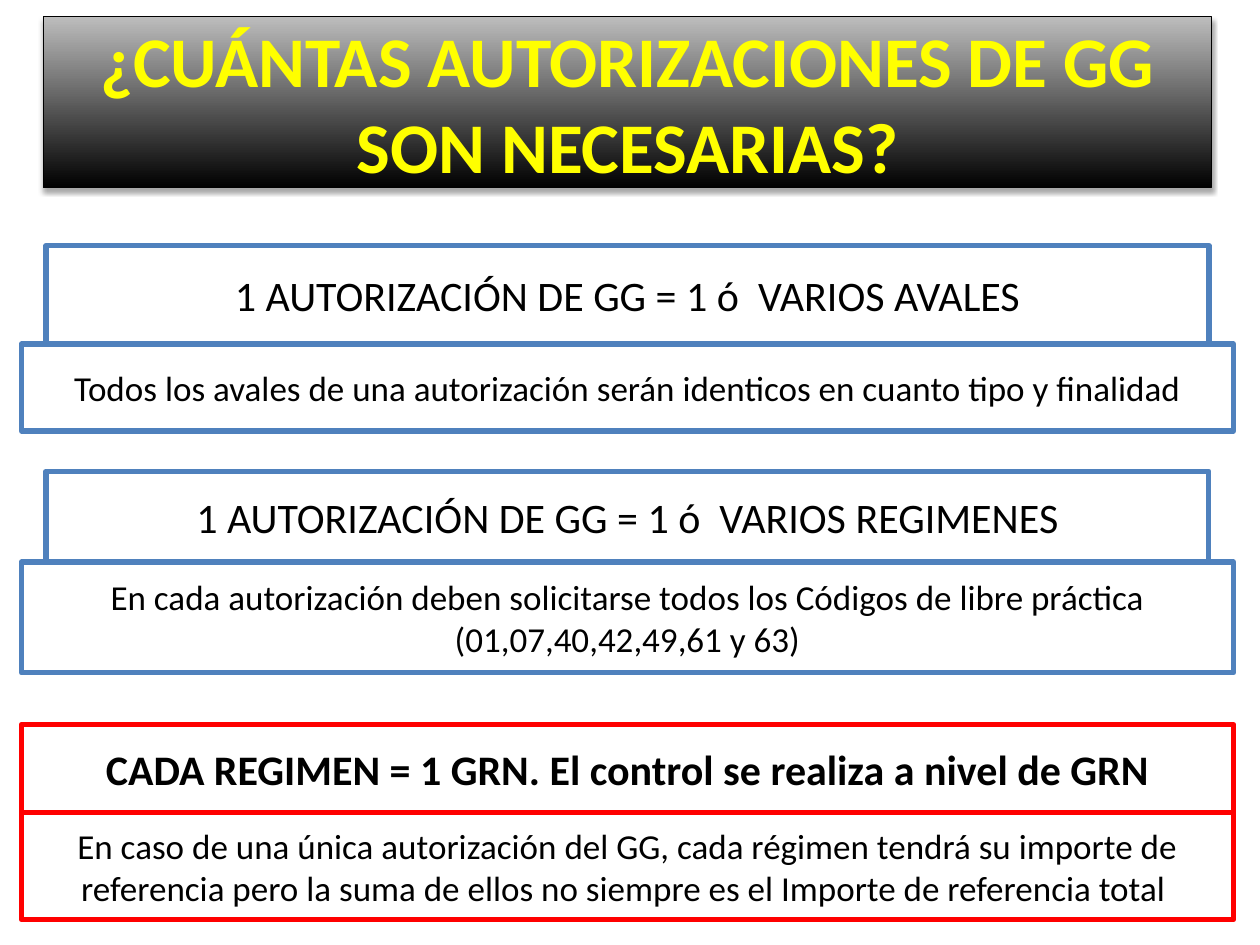
from dataclasses import dataclass

import pptx
import pptx.dml.color
import pptx.enum.shapes
import pptx.enum.text
import pptx.oxml
import pptx.oxml.ns
import pptx.util

SLIDE_WIDTH = pptx.util.Inches(10)
SLIDE_HEIGHT = pptx.util.Inches(7.5)
CENTER = 49.8
BLUE, RED, BLACK, YELLOW, GREY = "4F81BD", "FF0000", "000000", "FFFF00", "BDBDBD"


@dataclass
class Band:
    text: str
    top: float
    height: float
    width: float
    size: float
    line_color: str
    line_width: float = 3
    text_color: str = BLACK
    bold: bool = False


@dataclass
class Panel:
    heading: str
    detail: str
    top: float
    heading_height: float
    detail_height: float
    heading_width: float
    color: str
    bold: bool = False


def rgb(value: str) -> pptx.dml.color.RGBColor:
    return pptx.dml.color.RGBColor.from_string(value)


def across(percent: float) -> int:
    return round(SLIDE_WIDTH * percent / 100)


def down(percent: float) -> int:
    return round(SLIDE_HEIGHT * percent / 100)


def add_box(page):
    box = page.shapes.add_shape(
        pptx.enum.shapes.MSO_SHAPE.RECTANGLE, 0, 0, across(1), down(1)
    )
    box.shadow.inherit = False
    return box


def format_band(box, band: Band) -> None:
    box.left, box.top = across(CENTER - band.width / 2), down(band.top)
    box.width, box.height = across(band.width), down(band.height)
    box.fill.background()
    box.line.color.rgb = rgb(band.line_color)
    box.line.width = pptx.util.Pt(band.line_width)
    frame = box.text_frame
    frame.word_wrap = True
    frame.auto_size = pptx.enum.text.MSO_AUTO_SIZE.NONE
    frame.vertical_anchor = pptx.enum.text.MSO_ANCHOR.MIDDLE
    para = frame.paragraphs[0]
    para.alignment = pptx.enum.text.PP_ALIGN.CENTER
    span = para.add_run()
    span.text = band.text
    span.font.name = "Calibri"
    span.font.size = pptx.util.Pt(band.size)
    span.font.bold = band.bold
    span.font.color.rgb = rgb(band.text_color)


def shade_banner(box) -> None:
    box.fill.gradient()
    box.fill.gradient_angle = 90
    for stop, color in zip(box.fill.gradient_stops, (BLACK, GREY)):
        stop.color.rgb = rgb(color)
    effects = box.element.spPr.find(pptx.oxml.ns.qn("a:effectLst"))
    effects.append(pptx.oxml.parse_xml(
        f'<a:outerShdw {pptx.oxml.ns.nsdecls("a")} blurRad="{pptx.util.Pt(3.1)}" '
        f'dist="{pptx.util.Pt(1.8)}" dir="5400000" rotWithShape="0">'
        f'<a:srgbClr val="{BLACK}"><a:alpha val="35000"/></a:srgbClr></a:outerShdw>'
    ))


def draw_panel(page, panel: Panel, heading_box) -> None:
    format_band(heading_box, Band(
        panel.heading, panel.top, panel.heading_height, panel.heading_width,
        24, panel.color, bold=panel.bold,
    ))
    format_band(add_box(page), Band(
        panel.detail, panel.top + panel.heading_height, panel.detail_height, 96.2,
        20, panel.color,
    ))


BANNER = Band("¿CUÁNTAS AUTORIZACIONES DE GG SON NECESARIAS?",
              1.73, 18.13, 92.7, 40.7, BLACK, 0.75, YELLOW, True)

PANELS = [
    Panel("1 AUTORIZACIÓN DE GG = 1 ó  VARIOS AVALES",
          "Todos los avales de una autorización serán identicos en cuanto tipo y finalidad",
          26, 10.4, 9.2, 92.3, BLUE),
    Panel("1 AUTORIZACIÓN DE GG = 1 ó  VARIOS REGIMENES",
          "En cada autorización deben solicitarse todos los Códigos de libre práctica "
          "(01,07,40,42,49,61 y 63)",
          49.87, 9.6, 11.73, 92.3, BLUE),
    Panel("CADA REGIMEN = 1 GRN. El control se realiza a nivel de GRN",
          "En caso de una única autorización del GG, cada régimen tendrá su importe de "
          "referencia pero la suma de ellos no siempre es el Importe de referencia total ",
          76.67, 9.33, 11.33, 96.2, RED, True),
]


def main() -> None:
    deck = pptx.Presentation()
    deck.slide_width, deck.slide_height = SLIDE_WIDTH, SLIDE_HEIGHT
    page = deck.slides.add_slide(deck.slide_layouts.get_by_name("Title Only"))
    banner_box = add_box(page)
    format_band(banner_box, BANNER)
    shade_banner(banner_box)
    for index, panel in enumerate(PANELS):
        draw_panel(page, panel, add_box(page) if index else page.shapes.title)
    deck.save("out.pptx")


if __name__ == "__main__":
    main()
